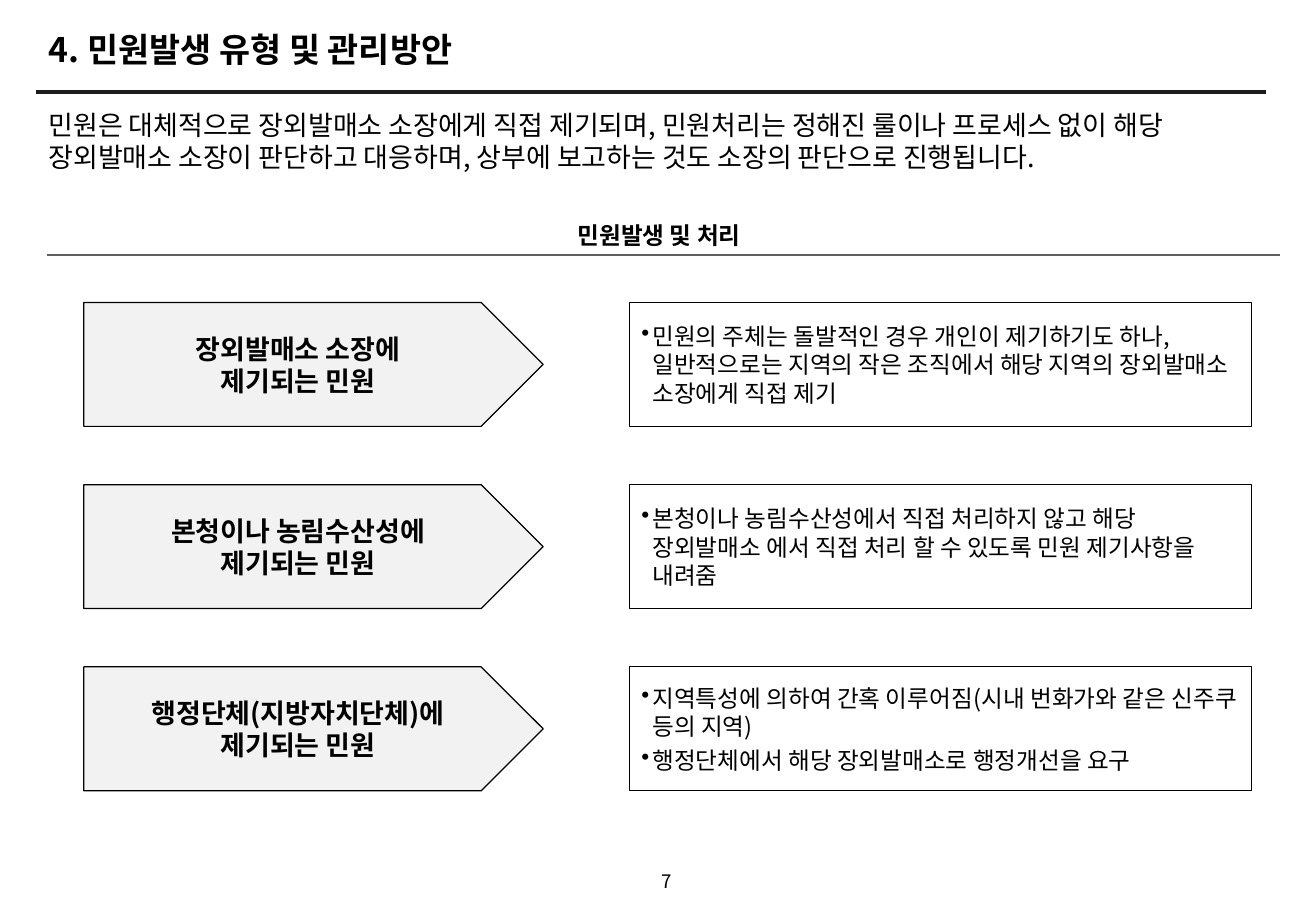
from lxml import etree
from pptx import Presentation
from pptx.enum import shapes, text
from pptx.dml.color import RGBColor
from pptx.oxml.ns import qn
from pptx.util import Inches, Pt

FONT = "Noto Sans CJK KR"
COLOURS = {"ink": "000000", "rule": "1C1C1C", "divider": "5F5F5F",
           "arrow": "F2F2F2", "paper": "FFFFFF"}
ROWS = [
    (["장외발매소 소장에", "제기되는 민원"],
     ["민원의 주체는 돌발적인 경우 개인이 제기하기도 하나, 일반적으로는 지역의 작은 조직에서 "
      "해당 지역의 장외발매소 소장에게 직접 제기"]),
    (["본청이나 농림수산성에", "제기되는 민원"],
     ["본청이나 농림수산성에서 직접 처리하지 않고 해당 장외발매소 에서 직접 처리 할 수 있도록 "
      "민원 제기사항을 내려줌"]),
    (["행정단체(지방자치단체)에", "제기되는 민원"],
     ["지역특성에 의하여 간혹 이루어짐(시내 번화가와 같은 신주쿠 등의 지역)",
      "행정단체에서 해당 장외발매소로 행정개선을 요구"]),
]


class Page:
    """Draws styled elements on one slide."""

    def __init__(self, deck):
        self.page = deck.slides.add_slide(deck.slide_layouts[1])

    def colour(self, name):
        return RGBColor.from_string(COLOURS[name])

    def place(self, box, left, top, width, height):
        box.left, box.top = Inches(left), Inches(top)
        box.width, box.height = Inches(width), Inches(height)

    def set_text(self, box, paragraphs, size, bold=False, centred=False,
                 bullet=False, anchor=text.MSO_ANCHOR.MIDDLE):
        frame = box.text_frame
        frame.word_wrap = True
        frame.auto_size = text.MSO_AUTO_SIZE.NONE
        frame.vertical_anchor = anchor
        for index, lines in enumerate(paragraphs):
            para = frame.add_paragraph() if index else frame.paragraphs[0]
            for number, line in enumerate(lines):
                if number:
                    para.add_line_break()
                para.add_run().text = line
            para.alignment = text.PP_ALIGN.CENTER if centred else text.PP_ALIGN.LEFT
            para.space_before = Pt(size * 0.2 if index else 0)
            props = para._p.get_or_add_pPr()
            indent = Inches(0.09) if bullet else 0
            props.set("marL", str(indent))
            props.set("indent", str(-indent))
            if bullet:
                etree.SubElement(props, qn("a:buChar"), char="•")
            else:
                etree.SubElement(props, qn("a:buNone"))
            font = para.font
            font.name, font.size, font.bold = FONT, Pt(size), bold
            font.color.rgb = self.colour("ink")
            etree.SubElement(props.find(qn("a:defRPr")), qn("a:ea"), typeface=FONT)

    def placeholder(self, index, area, content, size, **style):
        box = self.page.placeholders[index]
        self.place(box, *area)
        self.set_text(box, [[content]], size, **style)

    def label(self, area, content, size, bold=False):
        box = self.page.shapes.add_textbox(*map(Inches, area))
        self.set_text(box, [[content]], size, bold, centred=True)

    def panel(self, kind, area, fill, paragraphs, size, **style):
        box = self.page.shapes.add_shape(kind, *map(Inches, area))
        box.shadow.inherit = False
        box.fill.solid()
        box.fill.fore_color.rgb = self.colour(fill)
        box.line.color.rgb = self.colour("ink")
        box.line.width = Pt(0.75)
        self.set_text(box, paragraphs, size, **style)

    def rule(self, left, right, top, colour, width):
        line = self.page.shapes.add_connector(
            shapes.MSO_CONNECTOR.STRAIGHT,
            Inches(left), Inches(top), Inches(right), Inches(top))
        line.line.color.rgb = self.colour(colour)
        line.line.width = Pt(width)
        etree.SubElement(line._element.spPr, qn("a:effectLst"))


def main():
    deck = Presentation()
    deck.slide_width, deck.slide_height = Inches(10.83), Inches(7.5)
    page = Page(deck)
    page.rule(0.3, 10.42, 0.76, "rule", 2.25)
    page.placeholder(0, (0.3, 0.13, 9.75, 0.55), "4. 민원발생 유형 및 관리방안", 20, bold=True)
    page.placeholder(
        1, (0.3, 0.84, 10.24, 0.58),
        "민원은 대체적으로 장외발매소 소장에게 직접 제기되며, 민원처리는 정해진 룰이나 프로세스 없이 해당 "
        "장외발매소 소장이 판단하고 대응하며, 상부에 보고하는 것도 소장의 판단으로 진행됩니다.",
        16, anchor=text.MSO_ANCHOR.TOP)
    page.rule(0.39, 10.53, 2.1, "divider", 1.5)
    page.label((0.39, 1.78, 10.07, 0.31), "민원발생 및 처리", 14, bold=True)
    for row, (source, details) in enumerate(ROWS):
        top = 2.49 + 1.5 * row
        page.panel(shapes.MSO_SHAPE.PENTAGON, (0.69, top, 3.78, 1.02), "arrow",
                   [source], 16, bold=True, centred=True)
        page.panel(shapes.MSO_SHAPE.RECTANGLE, (5.18, top, 5.12, 1.02), "paper",
                   [[detail] for detail in details], 14, bullet=True)
    page.label((4.87, 7.06, 1.24, 0.39), "7", 11)
    deck.save("out.pptx")


if __name__ == "__main__":
    main()
